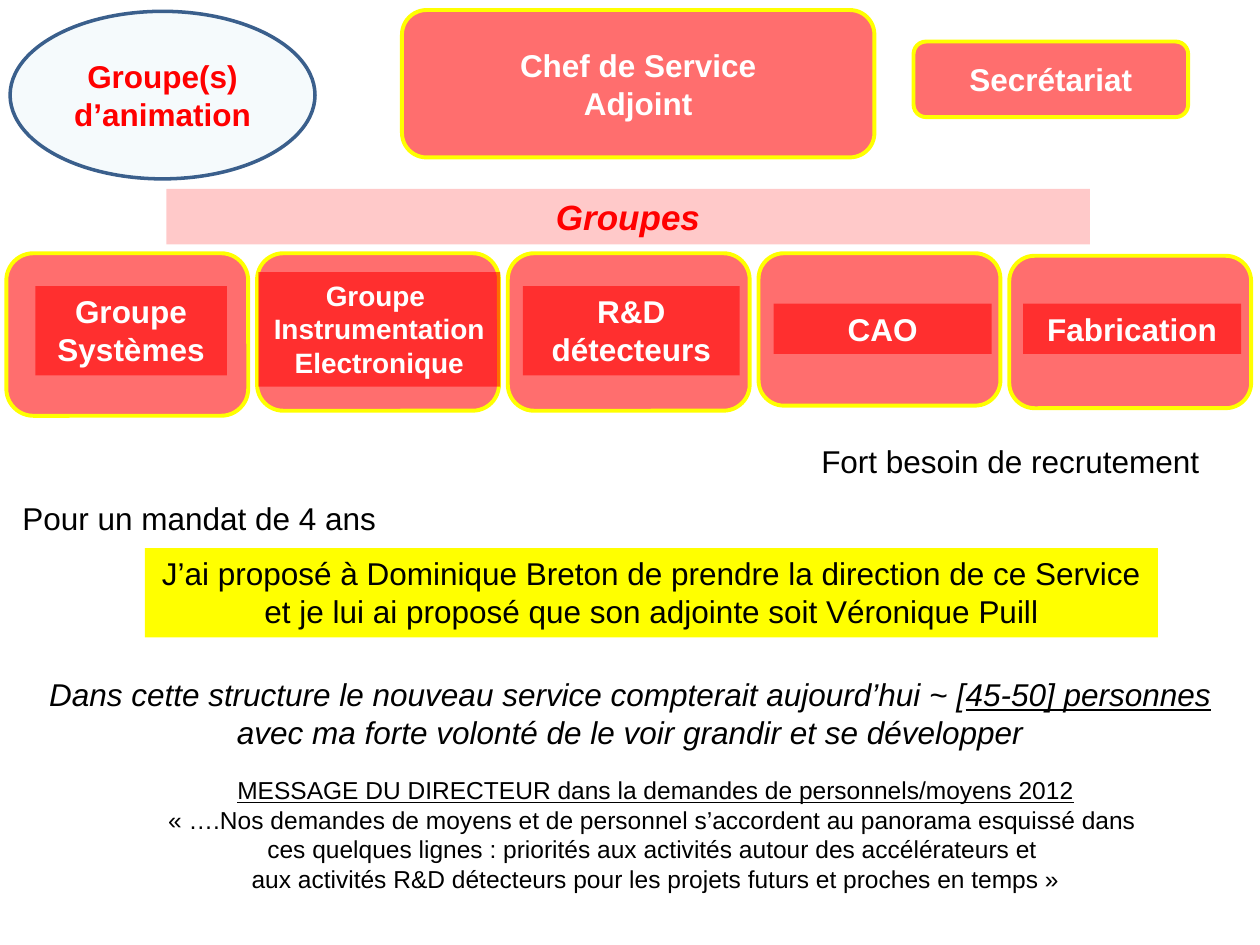
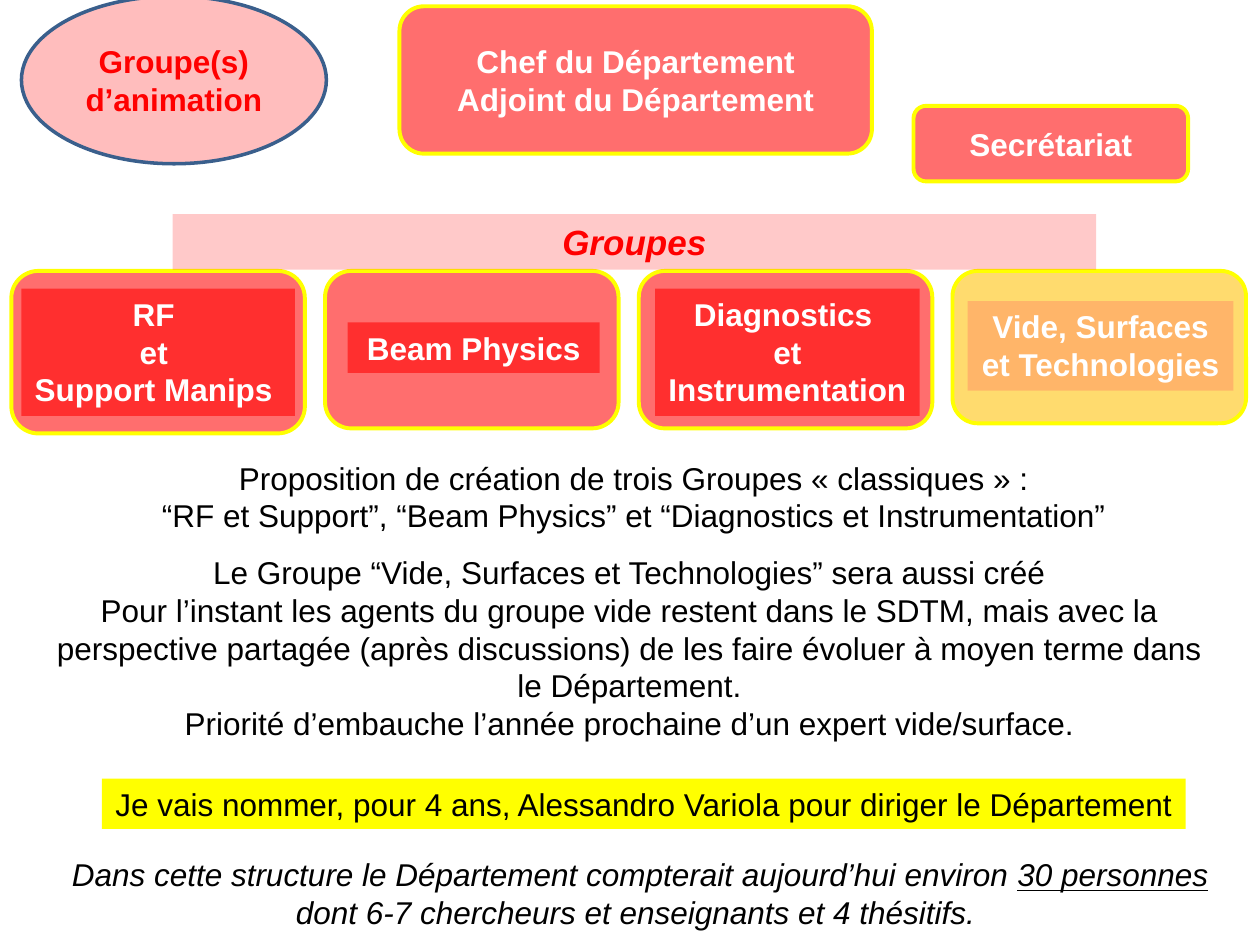
from dataclasses import dataclass

from pptx import Presentation
from pptx.dml.color import RGBColor
from pptx.enum.shapes import MSO_SHAPE
from pptx.enum.text import MSO_ANCHOR, PP_ALIGN
from pptx.oxml.xmlchemy import OxmlElement
from pptx.util import Inches, Pt


@dataclass(frozen=True)
class Theme:
    font: str = "Arial"
    red: str = "FF0000"
    amber: str = "FFC000"
    orange: str = "FF9966"
    yellow: str = "FFFF00"
    pale_blue: str = "DBEEF4"
    outline: str = "3A5F8C"
    white: str = "FFFFFF"
    black: str = "000000"
    box_alpha: int = 57
    ellipse_alpha: int = 26
    band_alpha: int = 21
    band_size: int = 20
    body: int = 18
    compact: int = 16
    quote: int = 14


THEME = Theme()


@dataclass
class Group:
    height: float
    lines: list
    label: tuple  # left, top, width, height
    size: int = THEME.body
    fill: str = THEME.red
    label_fill: str = THEME.red
    drop: float = 0  # offset below the row's top


def rgb(color):
    return RGBColor.from_string(color)


def write(sp, lines, color=THEME.black, size=THEME.body, bold=False, italic=False,
          align=PP_ALIGN.CENTER, anchor=MSO_ANCHOR.TOP, wrap=True):
    """Fill a shape with paragraphs; a line is a string or (plain, underlined)."""
    tf = sp.text_frame
    tf.word_wrap = wrap
    tf.vertical_anchor = anchor
    for i, line in enumerate(lines):
        p = tf.paragraphs[0] if i == 0 else tf.add_paragraph()
        p.alignment = align
        p.font.name, p.font.size = THEME.font, Pt(size)
        p.font.bold, p.font.italic = bold, italic
        p.font.color.rgb = rgb(color)
        plain, underlined = (line, "") if isinstance(line, str) else line
        if plain:
            p.add_run().text = plain
        if underlined:
            r = p.add_run()
            r.text = underlined
            r.font.underline = True


def add_box(slide, kind, at, fill, alpha=100, line=None, line_width=2.25):
    sp = slide.shapes.add_shape(kind, *map(Inches, at))
    sp.shadow.inherit = False
    sp.fill.solid()
    sp.fill.fore_color.rgb = rgb(fill)
    if alpha < 100:
        opacity = OxmlElement("a:alpha")
        opacity.set("val", str(alpha * 1000))
        sp.fill._xPr.solidFill[0].append(opacity)
    if line:
        sp.line.color.rgb = rgb(line)
        sp.line.width = Pt(line_width)
    else:
        sp.line.fill.background()
    return sp


def add_role(slide, at, lines=(), fill=THEME.red):
    """Rounded box with a yellow outline."""
    sp = add_box(slide, MSO_SHAPE.FLOWCHART_ALTERNATE_PROCESS, at, fill,
                 THEME.box_alpha, THEME.yellow)
    write(sp, lines, THEME.white, bold=True, anchor=MSO_ANCHOR.MIDDLE)


def add_animation(slide, left, top, fill):
    sp = add_box(slide, MSO_SHAPE.OVAL, (left, top, 2.42, 1.33), fill,
                 THEME.ellipse_alpha, THEME.outline, 2)
    write(sp, ["Groupe(s)", "d’animation"], THEME.red, bold=True,
          anchor=MSO_ANCHOR.MIDDLE)


def add_band(slide, left, top):
    sp = add_box(slide, MSO_SHAPE.RECTANGLE, (left, top, 7.33, 0.44),
                 THEME.red, THEME.band_alpha)
    write(sp, ["Groupes"], THEME.red, THEME.band_size, bold=True, italic=True)


def add_groups(slide, groups, left, top, width, step):
    """Row of evenly spaced group boxes, each with its label on top."""
    for i, g in enumerate(groups):
        add_role(slide, (left + i * step, top + g.drop, width, g.height), fill=g.fill)
    for g in groups:
        sp = add_box(slide, MSO_SHAPE.RECTANGLE, g.label, g.label_fill, THEME.box_alpha)
        write(sp, g.lines, THEME.white, g.size, bold=True)


def add_text(slide, at, lines, **style):
    sp = slide.shapes.add_textbox(*map(Inches, at))
    write(sp, lines, **{"wrap": False, **style})


def add_highlight(slide, at, lines):
    sp = add_box(slide, MSO_SHAPE.RECTANGLE, at, THEME.yellow)
    write(sp, lines, wrap=False)


def add_head(slide, left, top, lines):
    add_role(slide, (left, top, 3.75, 1.17), lines)


def add_secretariat(slide, top):
    add_role(slide, (7.25, top, 2.18, 0.6), ["Secrétariat"])


def build_service(slide):
    # Organisation chart
    add_head(slide, 3.19, 0.08, ["Chef de Service", "Adjoint"])
    add_secretariat(slide, 0.33)
    add_animation(slide, 0.08, 0.09, THEME.pale_blue)
    add_groups(slide, [
        Group(1.29, ["Groupe Systèmes"], (0.28, 2.27, 1.52, 0.71)),
        Group(1.25, ["Groupe ", "Instrumentation Electronique"],
              (2.05, 2.16, 1.92, 0.91), THEME.compact),
        Group(1.25, ["R&D", "détecteurs"], (4.15, 2.27, 1.72, 0.71)),
        Group(1.21, ["CAO"], (6.14, 2.41, 1.73, 0.4)),
        Group(1.21, ["Fabrication"], (8.12, 2.41, 1.73, 0.4), drop=0.02),
    ], left=0.05, top=2.01, width=1.92, step=1.99)
    add_band(slide, 1.32, 1.5)

    # Remarks and proposal
    add_text(slide, (6.42, 3.46, 3.23, 0.4), ["Fort besoin de recrutement"],
             align=PP_ALIGN.LEFT)
    add_text(slide, (0.08, 3.91, 3.03, 0.4), ["Pour un mandat de 4 ans"],
             align=PP_ALIGN.LEFT)
    add_highlight(slide, (1.15, 4.35, 8.04, 0.71), [
        "J’ai proposé à Dominique Breton de prendre la direction de ce Service",
        "et je lui ai proposé que son adjointe soit Véronique Puill",
    ])
    add_text(slide, (0.28, 5.31, 9.44, 0.71), [
        ("Dans cette structure le nouveau service compterait aujourd’hui ~ [",
         "45-50] personnes"),
        "avec ma forte volonté de le voir grandir et se développer",
    ], italic=True)

    # Director's message
    add_text(slide, (0.83, 6.1, 8.75, 1.04), [
        ("", "MESSAGE DU DIRECTEUR dans la demandes de personnels/moyens 2012"),
        "« ….Nos demandes de moyens et de personnel s’accordent au panorama esquissé dans ",
        "ces quelques lignes : priorités aux activités autour des accélérateurs et ",
        "aux activités R&D détecteurs pour les projets futurs et proches en temps »",
    ], size=THEME.quote, anchor=MSO_ANCHOR.MIDDLE, wrap=True)


def build_department(slide):
    # Organisation chart
    add_head(slide, 3.17, 0.05, ["Chef du Département", "Adjoint du Département"])
    add_secretariat(slide, 0.84)
    add_animation(slide, 0.17, -0.03, THEME.red)
    add_groups(slide, [
        Group(1.29, ["RF ", "et ", "Support Manips "], (0.17, 2.29, 2.17, 1.01)),
        Group(1.25, ["Beam Physics"], (2.76, 2.56, 2, 0.4)),
        Group(1.25, ["Diagnostics ", "et", "Instrumentation"], (5.2, 2.29, 2.1, 1.01)),
        Group(1.21, ["Vide, Surfaces et Technologies"], (7.68, 2.39, 2.11, 0.71),
              fill=THEME.amber, label_fill=THEME.orange),
    ], left=0.09, top=2.15, width=2.33, step=2.49)
    add_band(slide, 1.37, 1.7)

    # Proposal
    add_text(slide, (1.15, 3.59, 7.76, 0.71), [
        "Proposition de création de trois Groupes « classiques » :",
        "“RF et Support”, “Beam Physics” et “Diagnostics et Instrumentation”",
    ])
    add_text(slide, (0.31, 4.34, 9.44, 1.62), [
        "Le Groupe “Vide, Surfaces et Technologies” sera aussi créé ",
        "Pour l’instant les agents du groupe vide restent dans le SDTM, mais avec la ",
        "perspective partagée (après discussions) de les faire évoluer à moyen terme dans ",
        "le Département. ",
        "Priorité d’embauche l’année prochaine d’un expert vide/surface. ",
    ])

    # Appointment and staffing
    add_highlight(slide, (0.81, 6.18, 8.6, 0.4), [
        "Je vais nommer, pour 4 ans, Alessandro Variola pour diriger le Département",
    ])
    add_text(slide, (0.43, 6.74, 9.3, 0.71), [
        ("Dans cette structure le Département compterait aujourd’hui environ ",
         "30 personnes"),
        "dont 6-7 chercheurs et enseignants et 4 thésitifs. ",
    ], italic=True)


def main():
    prs = Presentation()
    prs.slide_width, prs.slide_height = Inches(10), Inches(7.5)
    blank = prs.slide_layouts[6]
    for build in (build_service, build_department):
        build(prs.slides.add_slide(blank))
    prs.save("out.pptx")


if __name__ == "__main__":
    main()
